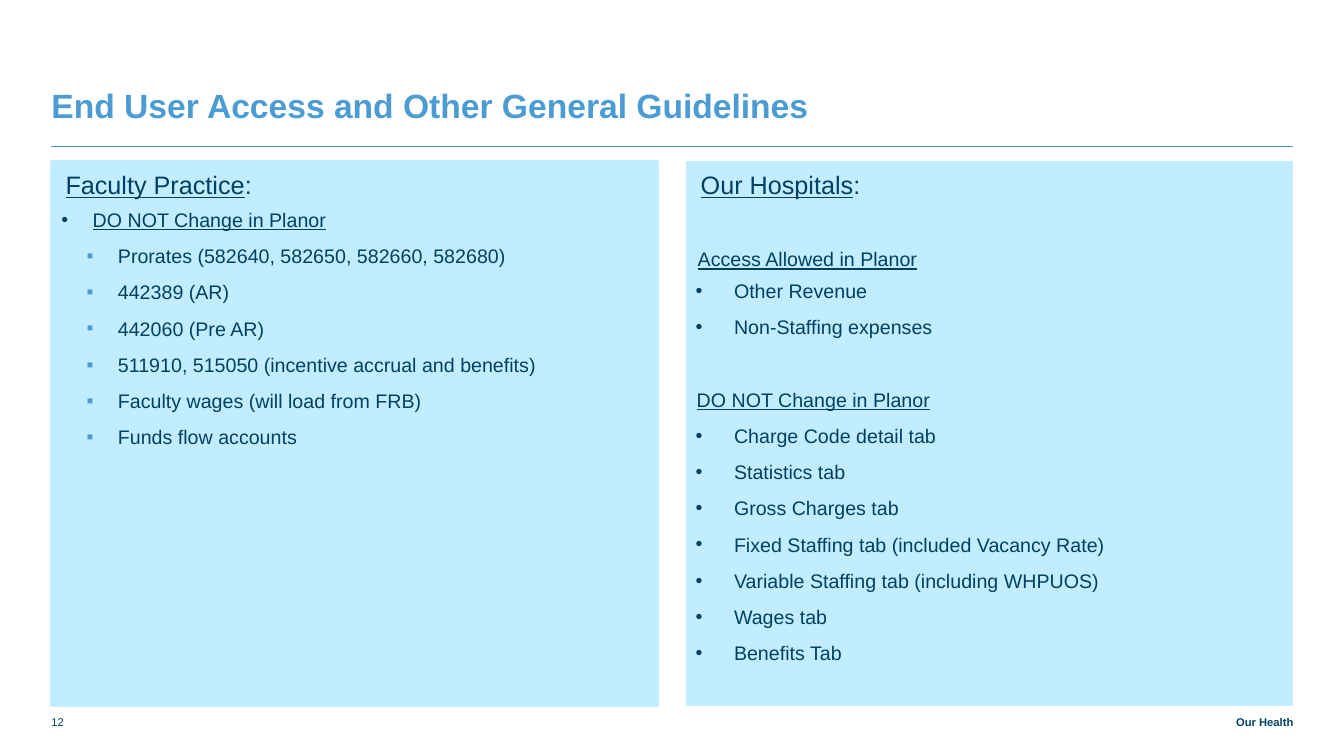
from dataclasses import dataclass

from lxml import etree
from pptx import Presentation
from pptx import util as u
from pptx.dml.color import RGBColor
from pptx.enum import shapes, text
from pptx.oxml import ns


@dataclass(frozen=True)
class Theme:
    """Colours, font and type sizes of the deck."""
    font: str = "Arial"
    navy: str = "004163"
    blue: str = "4B9CD3"
    pale: str = "C2ECFF"
    title: int = 24
    heading: int = 18
    body: int = 14
    small: int = 8


@dataclass(frozen=True)
class Level:
    """Indent, spacing and bullet of one kind of paragraph."""
    margin: float
    hanging: float = 0
    after: int = 9
    bullet: str = ""
    bullet_color: str = ""


class Slide:
    """Draws styled elements on the current slide."""

    def __init__(self, page, theme):
        self.page = page
        self.theme = theme

    def frame(self, shape, anchor, top=0):
        frame = shape.text_frame
        frame.word_wrap = True
        frame.vertical_anchor = anchor
        frame.margin_left = frame.margin_right = frame.margin_bottom = 0
        frame.margin_top = u.Inches(top)
        return frame

    def span(self, para, words, size, color, bold=False, underline=False):
        span = para.add_run()
        span.text = words
        font = span.font
        font.name, font.size = self.theme.font, u.Pt(size)
        font.bold, font.underline = bold, underline
        font.color.rgb = RGBColor.from_string(color)

    def label(self, place, words, size, color, bold=False,
              align=text.PP_ALIGN.LEFT, spacing=None):
        box = self.page.shapes.add_textbox(*map(u.Inches, place))
        para = self.frame(box, text.MSO_ANCHOR.BOTTOM).paragraphs[0]
        para.alignment = align
        if spacing:
            para.line_spacing = u.Pt(spacing)
        self.span(para, words, size, color, bold)

    def rule(self, left, right, top):
        line = self.page.shapes.add_connector(
            shapes.MSO_CONNECTOR.STRAIGHT,
            *map(u.Inches, (left, top, right, top)))
        line.line.color.rgb = RGBColor.from_string(self.theme.blue)
        line.line.width = u.Pt(0.5)
        properties = line._element.spPr
        etree.SubElement(properties, ns.qn("a:effectLst"))

    def panel(self, place, border):
        box = self.page.shapes.add_shape(
            shapes.MSO_SHAPE.RECTANGLE, *map(u.Inches, place))
        box.shadow.inherit = False
        pale = RGBColor.from_string(self.theme.pale)
        box.fill.solid()
        box.fill.fore_color.rgb = pale
        box.line.color.rgb = pale
        box.line.width = u.Pt(border)
        return self.frame(box, text.MSO_ANCHOR.TOP, 0.08)

    def paragraph(self, frame, level, before=0):
        first = frame.paragraphs[0]
        para = frame.add_paragraph() if first.runs else first
        para.alignment = text.PP_ALIGN.LEFT
        para.space_after = u.Pt(level.after)
        if before:
            para.space_before = u.Pt(before)
        properties = para._p.get_or_add_pPr()
        properties.set("marL", str(u.Inches(level.margin)))
        properties.set("indent", str(u.Inches(-level.hanging)))
        if level.bullet_color:
            color = etree.SubElement(properties, ns.qn("a:buClr"))
            etree.SubElement(color, ns.qn("a:srgbClr"), val=level.bullet_color)
        if level.bullet:
            etree.SubElement(properties, ns.qn("a:buFont"), typeface=self.theme.font)
            etree.SubElement(properties, ns.qn("a:buChar"), char=level.bullet)
        return para

    def heading(self, frame, words):
        para = self.paragraph(frame, Level(0.14, after=6))
        self.span(para, words, self.theme.heading, self.theme.navy, underline=True)
        self.span(para, ":", self.theme.heading, self.theme.navy)

    def item(self, frame, words, level, underline=False, before=0):
        para = self.paragraph(frame, level, before)
        self.span(para, words, self.theme.body, self.theme.navy, underline=underline)


def main():
    """Build and save the guidelines slide."""
    theme = Theme()
    deck = Presentation()
    deck.slide_width, deck.slide_height = u.Inches(13.33), u.Inches(7.5)
    slide = Slide(deck.slides.add_slide(deck.slide_layouts[6]), theme)

    left, right, top, width, height = 0.51, 12.82, 1.6, 6.01, 5.4
    slide.label((left, 0.45, 10.19, 0.79),
                "End User Access and Other General Guidelines",
                theme.title, theme.blue, bold=True, spacing=28)
    slide.rule(left, right, 1.45)

    faculty = slide.panel((left, top, width, height), 2.25)
    slide.heading(faculty, "Faculty Practice")
    slide.item(faculty, "DO NOT Change in Planor",
               Level(0.41, 0.31, bullet="•"), underline=True)
    square = Level(0.66, 0.31, bullet="▪", bullet_color=theme.blue)
    for words in ("Prorates (582640, 582650, 582660, 582680)",
                  "442389 (AR)",
                  "442060 (Pre AR)",
                  "511910, 515050 (incentive accrual and benefits)",
                  "Faculty wages (will load from FRB)",
                  "Funds flow accounts"):
        slide.item(faculty, words, square)

    hospitals = slide.panel((right - width, top, width, height), 0.75)
    slide.heading(hospitals, "Our Hospitals")
    groups = (
        ("Access Allowed in Planor", Level(0.11, after=6), 28,
         ("Other Revenue", "Non-Staffing expenses")),
        ("DO NOT Change in Planor", Level(0.1), 26,
         ("Charge Code detail tab", "Statistics tab", "Gross Charges tab",
          "Fixed Staffing tab (included Vacancy Rate)",
          "Variable Staffing tab (including WHPUOS)",
          "Wages tab", "Benefits Tab")),
    )
    dot = Level(0.47, 0.38, bullet="•")
    for subject, level, before, items in groups:
        slide.item(hospitals, subject, level, underline=True, before=before)
        for words in items:
            slide.item(hospitals, words, dot)

    slide.label((left, 7, 0.46, 0.23), "12", theme.small, theme.navy)
    slide.label((11.19, 7, 1.64, 0.23), "Our Health", theme.small, theme.navy,
                bold=True, align=text.PP_ALIGN.RIGHT)
    deck.save("out.pptx")


if __name__ == "__main__":
    main()
